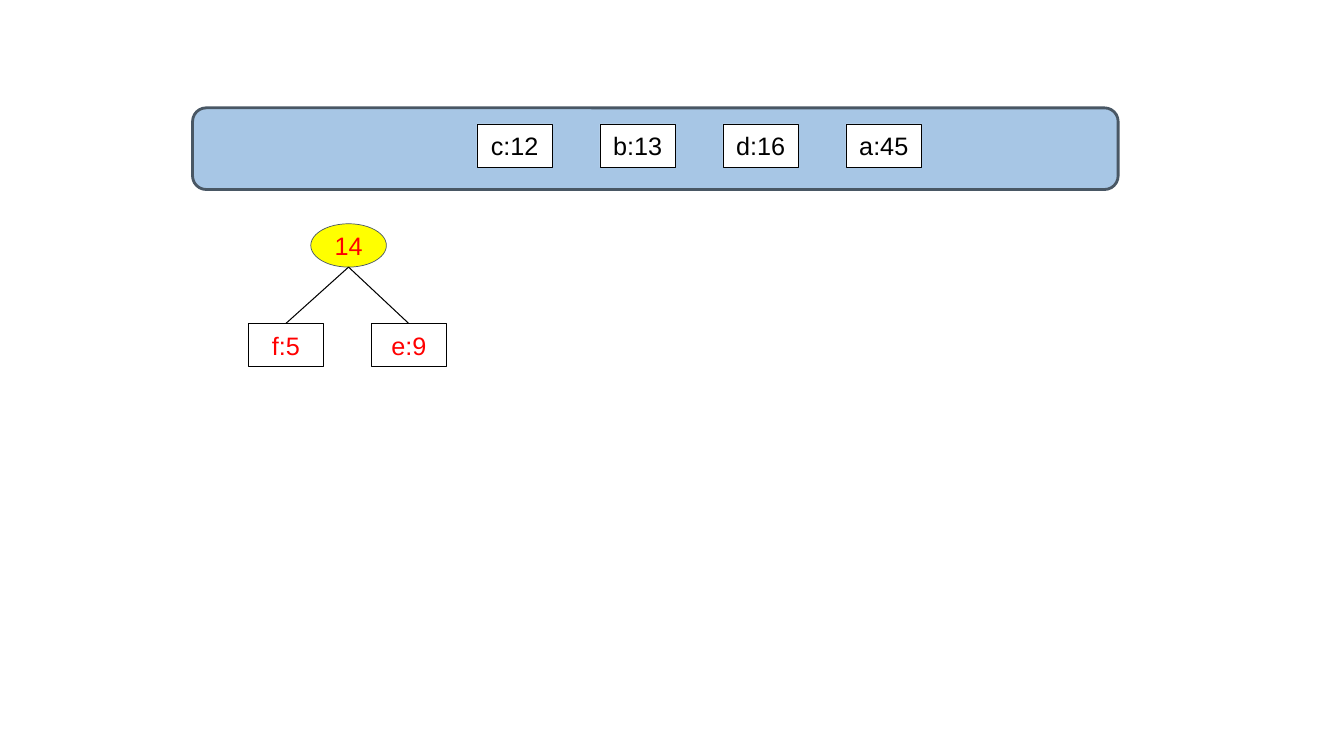
import pptx
import pptx.dml.color
import pptx.enum.shapes
import pptx.enum.text
import pptx.oxml
import pptx.oxml.ns
import pptx.util

Inches = pptx.util.Inches
Kind = pptx.enum.shapes.MSO_SHAPE

NODE_W, NODE_H = 0.75, 0.43
COLUMN, ROW = 1.22, 0.99
QUEUE_LEFT, TREE_LEFT, TOP = 4.73, 2.46, 1.23


def color(value):
    return pptx.dml.color.RGBColor.from_string(value)


def add_block(slide, kind, box, fill, line, width):
    block = slide.shapes.add_shape(kind, *map(Inches, box))
    block.shadow.inherit = False
    block.fill.solid()
    block.fill.fore_color.rgb = color(fill)
    block.line.color.rgb = color(line)
    block.line.width = pptx.util.Pt(width)
    return block


def write(block, text, *, ink="000000", size=18, font="Arial"):
    frame = block.text_frame
    frame.margin_left = frame.margin_right = 0
    frame.margin_top = frame.margin_bottom = 0
    frame.vertical_anchor = pptx.enum.text.MSO_ANCHOR.MIDDLE
    paragraph = frame.paragraphs[0]
    paragraph.alignment = pptx.enum.text.PP_ALIGN.CENTER
    run = paragraph.add_run()
    run.text = text
    run.font.name = font
    run.font.size = pptx.util.Pt(size)
    run.font.color.rgb = color(ink)


def add_node(slide, text, left, column, row, *, kind=Kind.RECTANGLE,
             fill="FFFFFF", line="000000", ink="000000"):
    box = (left + column * COLUMN, TOP + row * ROW, NODE_W, NODE_H)
    node = add_block(slide, kind, box, fill, line, 0.5)
    write(node, text, ink=ink)
    return node


def add_branch(slide, child, parent):
    parent_foot = (parent.left + parent.width // 2, parent.top + parent.height)
    branch = slide.shapes.add_connector(
        pptx.enum.shapes.MSO_CONNECTOR.STRAIGHT,
        child.left + child.width // 2, child.top, *parent_foot)
    branch.begin_connect(child, 0)
    branch.line.color.rgb = color("000000")
    branch.line.width = pptx.util.Pt(0.75)
    properties = branch.element.find(pptx.oxml.ns.qn("p:spPr"))
    properties.append(pptx.oxml.parse_xml(
        f"<a:effectLst {pptx.oxml.ns.nsdecls('a')}/>"))


def main():
    deck = pptx.Presentation()
    deck.slide_width, deck.slide_height = Inches(13.33), Inches(7.5)
    slide = deck.slides.add_slide(deck.slide_layouts[6])

    add_block(slide, Kind.ROUNDED_RECTANGLE, (1.91, 1.07, 9.18, 0.81),
              "A7C6E5", "495764", 2)
    leaves = [add_node(slide, text, TREE_LEFT, column, 2, ink="FF0000")
              for column, text in enumerate(("f:5", "e:9"))]
    for column, text in enumerate(("c:12", "b:13", "d:16", "a:45")):
        add_node(slide, text, QUEUE_LEFT, column, 0)
    root = add_node(slide, "14", TREE_LEFT, 0.51, 1, kind=Kind.OVAL,
                    fill="FFFF00", line="495764", ink="FF0000")
    for leaf in leaves:
        add_branch(slide, leaf, root)

    deck.save("out.pptx")


if __name__ == "__main__":
    main()
